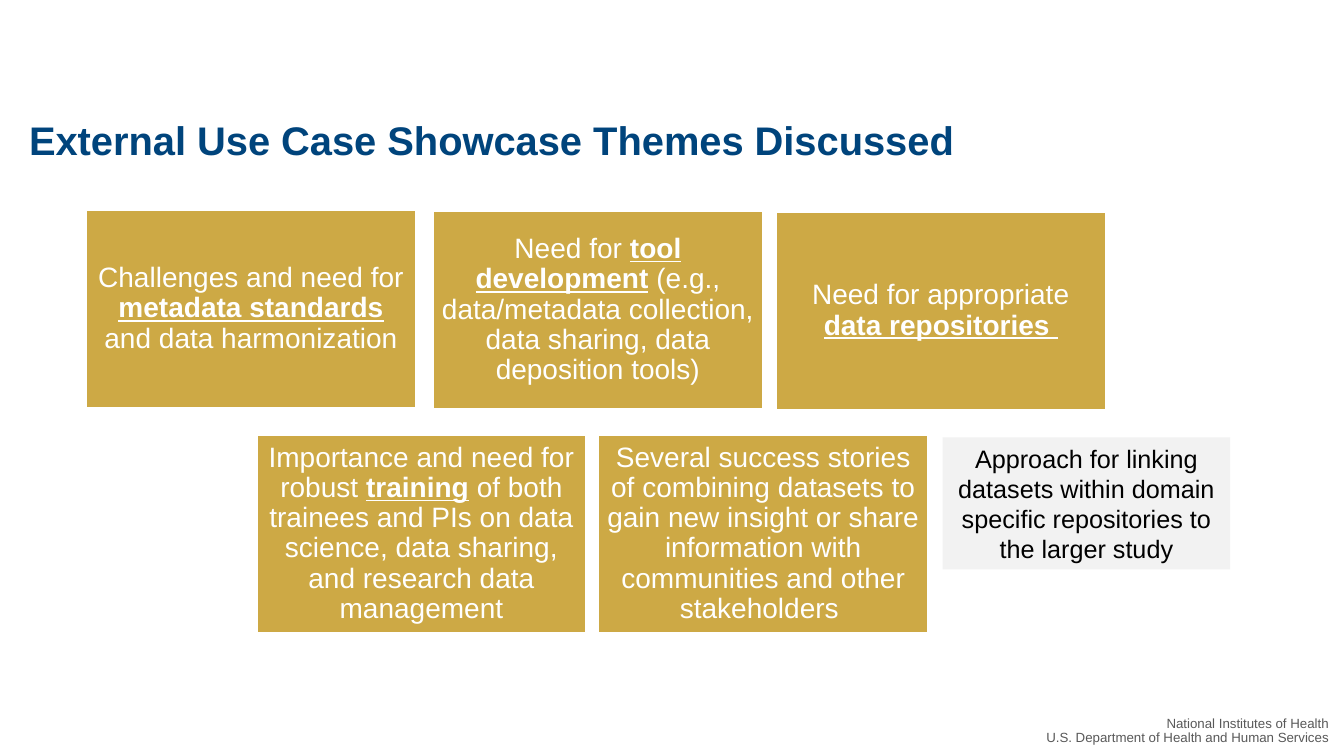
import dataclasses

import pptx
import pptx.dml.color
import pptx.enum.shapes
import pptx.enum.text
import pptx.util

Inches = pptx.util.Inches
ALIGN = pptx.enum.text.PP_ALIGN
ANCHOR = pptx.enum.text.MSO_ANCHOR


@dataclasses.dataclass(frozen=True)
class Theme:
    font: str = "Arial"
    gold: str = "CDA945"
    grey: str = "F2F2F2"
    white: str = "FFFFFF"
    black: str = "000000"
    title: str = "00447C"
    footer: str = "595959"
    title_size: float = 28.5
    card_size: float = 20
    note_size: float = 18
    footer_size: float = 9.5


def rgb(value):
    return pptx.dml.color.RGBColor.from_string(value)


def write_text(shape, paragraphs, *, font, size, color, align=ALIGN.LEFT, anchor=ANCHOR.TOP,
               insets=(0.1, 0.05, 0.1, 0.05), spacing=1.0, bold=False, wrap=True):
    frame = shape.text_frame
    frame.word_wrap = wrap
    frame.vertical_anchor = anchor
    frame.margin_left, frame.margin_top, frame.margin_right, frame.margin_bottom = map(Inches, insets)
    for index, runs in enumerate(paragraphs):
        paragraph = frame.add_paragraph() if index else frame.paragraphs[0]
        paragraph.alignment = align
        paragraph.line_spacing = spacing
        for text, emphasis in runs:
            run = paragraph.add_run()
            run.text = text
            run.font.name = font
            run.font.size = pptx.util.Pt(size)
            run.font.color.rgb = rgb(color)
            run.font.bold = bold or emphasis
            run.font.underline = emphasis


class SlideBuilder:
    def __init__(self, slide, theme):
        self.slide = slide
        self.theme = theme

    def text_box(self, box, paragraphs, **style):
        shape = self.slide.shapes.add_textbox(*map(Inches, box))
        write_text(shape, paragraphs, font=self.theme.font, **style)

    def rectangle(self, box, runs, fill, line=None, **style):
        shape = self.slide.shapes.add_shape(
            pptx.enum.shapes.MSO_SHAPE.RECTANGLE, *map(Inches, box))
        shape.shadow.inherit = False
        shape.fill.solid()
        shape.fill.fore_color.rgb = rgb(fill)
        if line:
            shape.line.color.rgb = rgb(line)
            shape.line.width = pptx.util.Pt(2)
        else:
            shape.line.fill.background()
        write_text(shape, [runs], font=self.theme.font, align=ALIGN.CENTER,
                   anchor=ANCHOR.MIDDLE, **style)

    def card(self, left, top, runs):
        theme = self.theme
        self.rectangle((left, top, 3.28, 1.97), runs, theme.gold, theme.white,
                       size=theme.card_size, color=theme.white, spacing=0.9, insets=(0.08,) * 4)

    def note(self, box, text):
        theme = self.theme
        self.rectangle(box, [(text, False)], theme.grey, size=theme.note_size, color=theme.black)


CARDS = [
    (0.85, 2.08, [("Challenges and need for ", False), ("metadata standards ", True),
                  ("and data harmonization", False)]),
    (4.29, 2.09, [("Need for ", False), ("tool development", True),
                  (" (e.g., data/metadata collection, data sharing, data deposition tools)", False)]),
    (7.69, 2.1, [("Need for appropriate ", False), ("data repositories ", True)]),
    (2.54, 4.31, [("Importance and need for robust ", False), ("training", True),
                  (" of both trainees and PIs on data science, data sharing, "
                   "and research data management", False)]),
    (5.93, 4.31, [("Several success stories of combining datasets to gain new insight or share "
                   "information with communities and other stakeholders ", False)]),
]
FOOTER = ["National Institutes of Health", "U.S. Department of Health and Human Services"]


def main():
    presentation = pptx.Presentation()
    presentation.slide_width = Inches(13.33)
    presentation.slide_height = Inches(7.5)
    theme = Theme()
    builder = SlideBuilder(presentation.slides.add_slide(presentation.slide_layouts[6]), theme)
    builder.text_box((10.25, 7.06, 3.08, 0.44), [[(line, False)] for line in FOOTER],
                     size=theme.footer_size, color=theme.footer, align=ALIGN.RIGHT,
                     anchor=ANCHOR.BOTTOM, insets=(0.1, 0.05, 0.15, 0.1), spacing=0.9, wrap=False)
    builder.text_box((0.19, 1.06, 12, 0.8), [[("External Use Case Showcase Themes Discussed", False)]],
                     size=theme.title_size, color=theme.title, bold=True,
                     insets=(0.1, 0.09, 0.1, 0.05))
    for left, top, runs in CARDS:
        builder.card(left, top, runs)
    builder.note((9.35, 4.34, 2.85, 1.31),
                 "Approach for linking datasets within domain specific repositories to the larger study")
    presentation.save("out.pptx")


if __name__ == "__main__":
    main()
